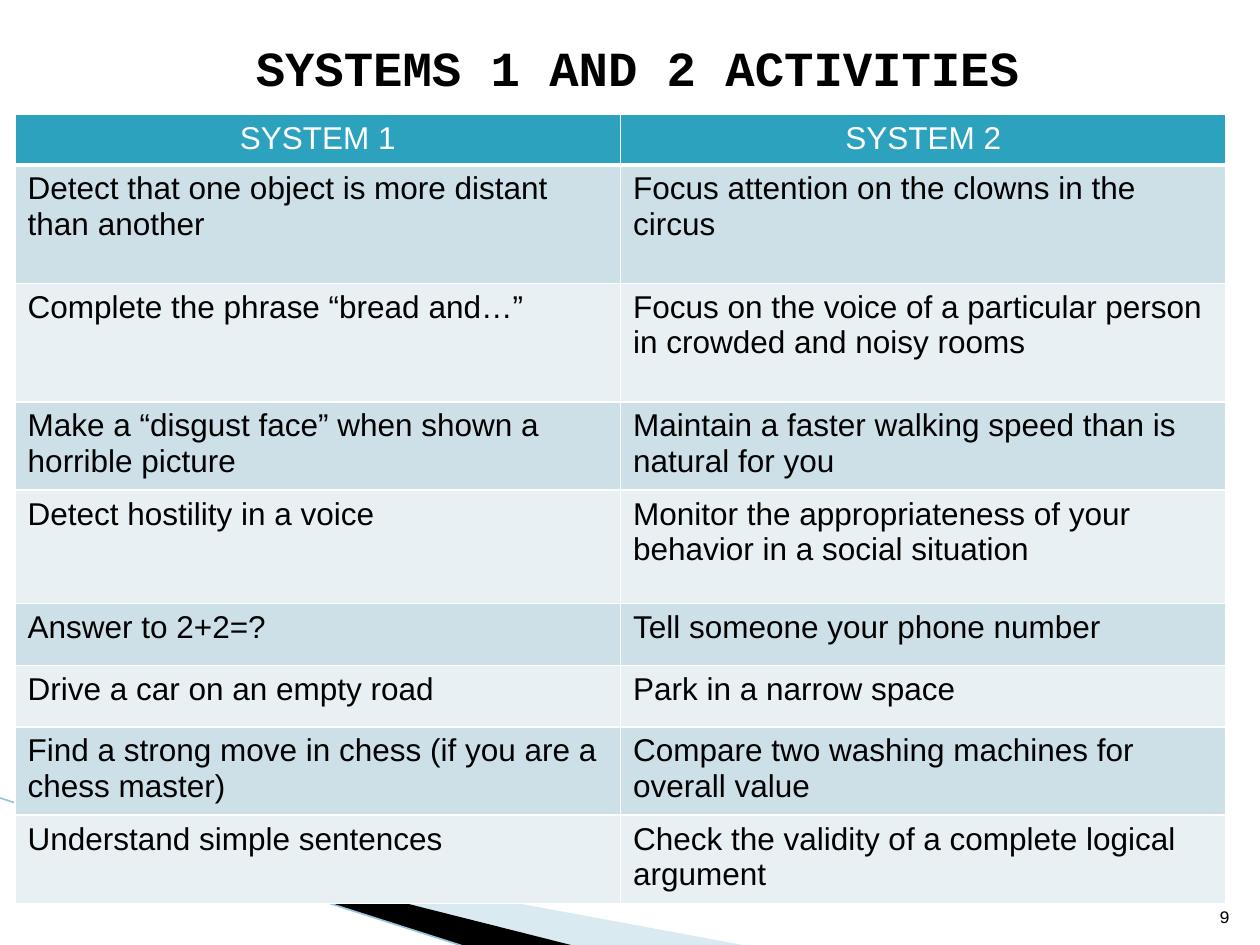
from dataclasses import dataclass

from lxml.etree import SubElement
from pptx import Presentation
from pptx.dml.color import RGBColor
from pptx.enum.shapes import MSO_CONNECTOR
from pptx.enum.text import MSO_ANCHOR, PP_ALIGN
from pptx.oxml.ns import qn
from pptx.util import Inches, Pt


@dataclass(frozen=True)
class Theme:
    black: str = "000000"
    white: str = "FFFFFF"
    header: str = "2DA2BF"
    bands: tuple = ("CDE0E8", "E8F0F4")
    wedge: str = "A0CBDC"
    edge: str = "97C5D8"
    title_font: str = "Courier New"
    table_font: str = "Arial"
    title_size: int = 28
    table_size: int = 18
    number_size: int = 10


@dataclass(frozen=True)
class Box:
    left: float
    top: float
    width: float
    height: float

    def lengths(self):
        return [Inches(n) for n in (self.left, self.top, self.width, self.height)]

    def point(self, x, y):
        return Inches(self.left + x), Inches(self.top + y)


THEME = Theme()
HEADINGS = ("SYSTEM 1", "SYSTEM 2")
# Row height in inches, then the two activities
ACTIVITIES = [
    (0.94, "Detect that one object is more distant than another",
     "Focus attention on the clowns in the circus"),
    (0.94, "Complete the phrase “bread and…”",
     "Focus on the voice of a particular person in crowded and noisy rooms"),
    (0.7, "Make a “disgust face” when shown a horrible picture",
     "Maintain a faster walking speed than is natural for you"),
    (0.9, "Detect hostility in a voice",
     "Monitor the appropriateness of your behavior in a social situation"),
    (0.49, "Answer to 2+2=?", "Tell someone your phone number"),
    (0.49, "Drive a car on an empty road", "Park in a narrow space"),
    (0.7, "Find a strong move in chess (if you are a chess master)",
     "Compare two washing machines for overall value"),
    (0.7, "Understand simple sentences",
     "Check the validity of a complete logical argument"),
]
HEADER_HEIGHT = 0.38


def color(value):
    return RGBColor.from_string(value)


def add_text(paragraph, text, font, size, text_color, align, bold=False):
    paragraph.alignment = align
    run = paragraph.add_run()
    run.text = text
    run.font.name = font
    run.font.size = Pt(size)
    run.font.bold = bold
    run.font.color.rgb = color(text_color)


def add_wedge(slide, box, points, fill, opacity=100):
    start, *others = [box.point(x, y) for x, y in points]
    builder = slide.shapes.build_freeform(*start)
    builder.add_line_segments(others, close=True)
    shape = builder.convert_to_shape()
    shape.shadow.inherit = False
    shape.line.fill.background()
    shape.fill.solid()
    shape.fill.fore_color.rgb = color(fill)
    if opacity < 100:
        solid_color = shape.fill._xPr.find(qn("a:solidFill"))[0]
        SubElement(solid_color, qn("a:alpha"), val=str(opacity * 1000))


def add_corner(slide, box):
    # Pale and black wedges under a thin edge line
    add_wedge(slide, box, [(0.55, 0.18), (5.95, 1.18), (4.56, 1.18), (0.55, 0.17)],
              THEME.wedge, 40)
    add_wedge(slide, box, [(0.53, 0.16), (4.57, 1.18), (3.72, 1.19), (0.54, 0.17)],
              THEME.black)
    edge = slide.shapes.add_connector(
        MSO_CONNECTOR.STRAIGHT, *box.point(-0.01, 0), *box.point(3.71, 1.19))
    edge.line.color.rgb = color(THEME.edge)
    edge.line.width = Pt(0.95)
    SubElement(edge._element.spPr, qn("a:effectLst"))


def add_title(slide, box):
    title = slide.shapes.title
    title.left, title.top, title.width, title.height = box.lengths()
    frame = title.text_frame
    frame.word_wrap = True
    frame.vertical_anchor = MSO_ANCHOR.MIDDLE
    paragraph = frame.paragraphs[0]
    properties = paragraph._p.get_or_add_pPr()
    properties.set("marL", str(Inches(0.4)))
    properties.set("indent", str(Inches(-0.28)))
    add_text(paragraph, "SYSTEMS 1 AND 2 ACTIVITIES", THEME.title_font,
             THEME.title_size, THEME.black, PP_ALIGN.CENTER, bold=True)


def add_slide_number(slide, box):
    frame = slide.shapes.add_textbox(*box.lengths()).text_frame
    frame.word_wrap = True
    frame.vertical_anchor = MSO_ANCHOR.BOTTOM
    add_text(frame.paragraphs[0], "9", THEME.title_font, THEME.number_size,
             THEME.black, PP_ALIGN.RIGHT)


def set_borders(cell, bottom):
    properties = cell._tc.get_or_add_tcPr()
    for side, width in (("L", 1), ("R", 1), ("T", 1), ("B", bottom)):
        line = SubElement(properties, qn(f"a:ln{side}"), w=str(Pt(width)))
        solid = SubElement(line, qn("a:solidFill"))
        SubElement(solid, qn("a:srgbClr"), val=THEME.white)


def fill_cell(cell, text, fill, text_color, align, bottom=1):
    set_borders(cell, bottom)
    cell.fill.solid()
    cell.fill.fore_color.rgb = color(fill)
    add_text(cell.text_frame.paragraphs[0], text, THEME.table_font,
             THEME.table_size, text_color, align)


def add_activity_table(slide, box):
    table = slide.shapes.add_table(
        len(ACTIVITIES) + 1, len(HEADINGS), *box.lengths()).table
    for column in table.columns:
        column.width = Inches(box.width / len(HEADINGS))

    # Heading row
    table.rows[0].height = Inches(HEADER_HEIGHT)
    for cell, heading in zip(table.rows[0].cells, HEADINGS):
        fill_cell(cell, heading, THEME.header, THEME.white, PP_ALIGN.CENTER, bottom=3)

    # Banded activity rows
    for index, (height, *texts) in enumerate(ACTIVITIES):
        row = table.rows[index + 1]
        row.height = Inches(height)
        for cell, text in zip(row.cells, texts):
            fill_cell(cell, text, THEME.bands[index % 2], THEME.black, PP_ALIGN.LEFT)


def main():
    presentation = Presentation()
    presentation.slide_width = Inches(10)
    presentation.slide_height = Inches(7.5)
    slide = presentation.slides.add_slide(presentation.slide_layouts[5])
    slide.background.fill.solid()
    slide.background.fill.fore_color.rgb = color(THEME.white)
    add_corner(slide, Box(0, 6.33, 5.95, 1.19))
    add_title(slide, Box(0.5, 0.21, 9, 0.65))
    add_slide_number(slide, Box(9.46, 7.01, 0.4, 0.4))
    table_height = HEADER_HEIGHT + sum(row[0] for row in ACTIVITIES)
    add_activity_table(slide, Box(0.12, 0.91, 9.61, table_height))
    presentation.save("out.pptx")


if __name__ == "__main__":
    main()
